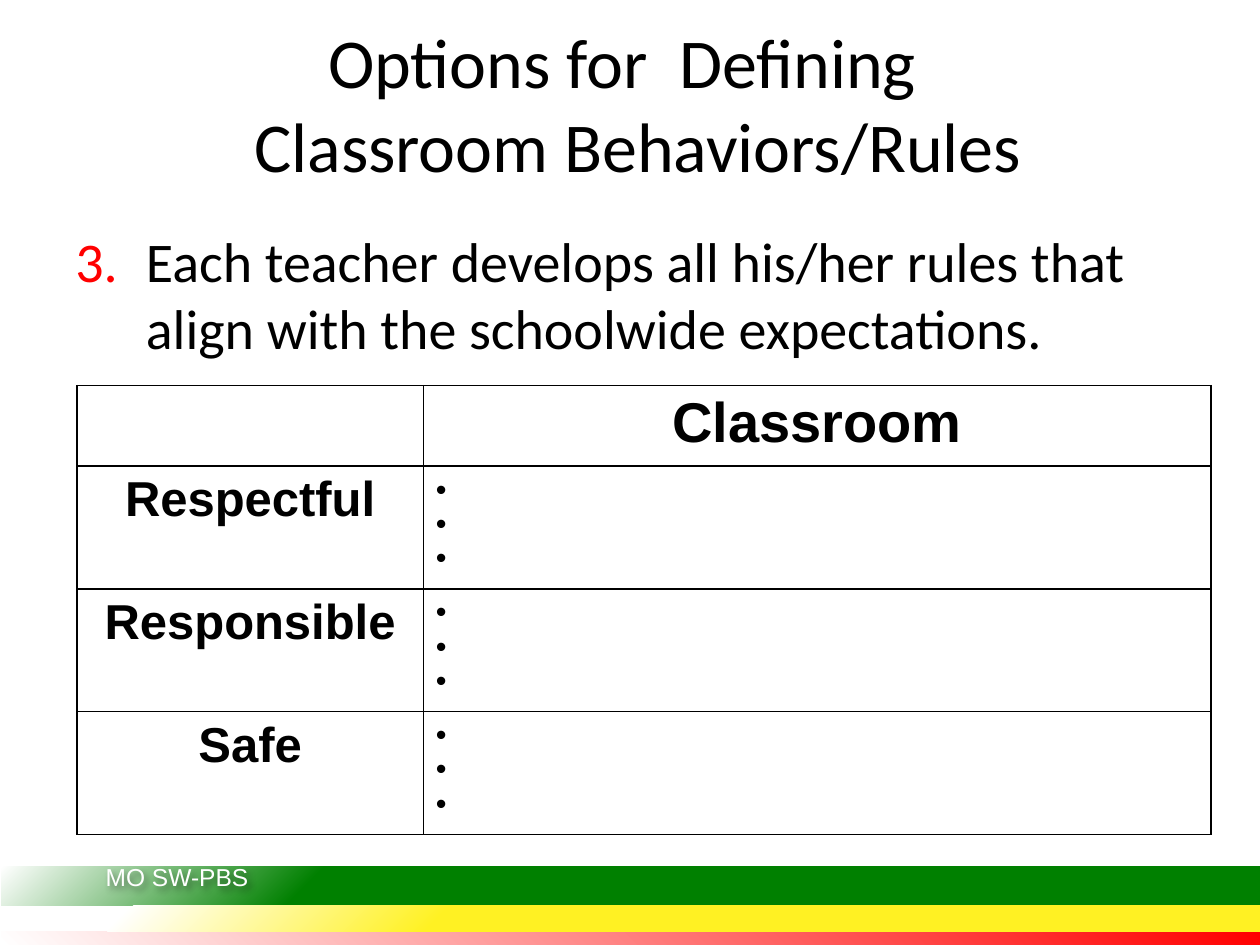
"""Build the classroom rules slide with its table and coloured footer."""
from lxml.etree import SubElement
from pptx import Presentation
from pptx.dml.color import RGBColor
from pptx.enum.shapes import MSO_SHAPE
from pptx.enum.text import MSO_ANCHOR, PP_ALIGN
from pptx.oxml import parse_xml
from pptx.oxml.ns import nsdecls, qn
from pptx.util import Inches, Pt

COLORS = {"black": "000000", "white": "FFFFFF", "red": "FF0000",
          "green": "008000", "yellow": "FFF123"}
EXPECTATIONS = ["Respectful", "Responsible", "Safe"]


def add_xml(parent, tag, **attrs):
    """Append a DrawingML child and return it."""
    return SubElement(parent, qn(f"a:{tag}"), attrs)


def add_run(p, text, size, font, color="black", bold=False):
    """Append one formatted run to a paragraph."""
    r = p.add_run()
    r.text = text
    r.font.size = Pt(size)
    r.font.name = font
    r.font.bold = bold
    r.font.color.rgb = RGBColor.from_string(COLORS[color])


def add_text_box(s, left, top, width, height, anchor=MSO_ANCHOR.TOP):
    """Add a wrapping text box and return it."""
    box = s.shapes.add_textbox(*map(Inches, (left, top, width, height)))
    box.text_frame.word_wrap = True
    box.text_frame.vertical_anchor = anchor
    return box


def add_band(s, top, height, color, stops, bottom):
    """Add a footer band with a radial gradient focused on a right corner."""
    sp = s.shapes.add_shape(MSO_SHAPE.RECTANGLE, Inches(0.01), Inches(top),
                            Inches(10), Inches(height))
    sp.shadow.inherit = False
    sp.line.fill.background()
    sp.fill.background()
    focus = 't="100000"' if bottom else 'b="100000"'
    marks = "".join(
        f'<a:gs pos="{pos * 1000}"><a:srgbClr val="{COLORS[c]}"/></a:gs>'
        for pos, c in zip(stops, (color, "white")))
    grad = parse_xml(
        f'<a:gradFill {nsdecls("a")} rotWithShape="1"><a:gsLst>{marks}</a:gsLst>'
        f'<a:path path="circle"><a:fillToRect l="100000" {focus}/></a:path>'
        '</a:gradFill>')
    spPr = sp._element.spPr
    spPr.replace(spPr.find(qn("a:noFill")), grad)


def add_footer(s):
    """Add the three bands and the shadowed footer label."""
    add_band(s, 7.39, 0.12, "red", (0, 100), False)
    add_band(s, 6.88, 0.31, "green", (75, 100), True)
    add_band(s, 7.19, 0.2, "yellow", (65, 90), True)
    box = add_text_box(s, 0.74, 6.79, 1.92, 0.4)
    add_run(box.text_frame.paragraphs[0], "MO SW-PBS", 14, "Arial", "white")
    effects = add_xml(box._element.spPr, "effectLst")
    shadow = add_xml(effects, "outerShdw", blurRad="50800", dist="38100",
                     dir="2700000", algn="tl", rotWithShape="0")
    color = add_xml(shadow, "srgbClr", val=COLORS["black"])
    add_xml(color, "alpha", val="40000")


def add_title(s):
    """Add the centred two-line title."""
    tf = add_text_box(s, 0.5, 0.3, 9, 1.03, MSO_ANCHOR.MIDDLE).text_frame
    p = tf.paragraphs[0]
    p.alignment = PP_ALIGN.CENTER
    add_run(p, "Options for  Defining ", 40, "Calibri")
    p.add_line_break()
    add_run(p, " Classroom Behaviors/Rules", 40, "Calibri")


def add_option(s):
    """Add the numbered option."""
    p = add_text_box(s, 0.5, 1.75, 9, 1.25).text_frame.paragraphs[0]
    pPr = p._p.get_or_add_pPr()
    pPr.set("marL", str(Inches(0.56)))
    pPr.set("indent", str(Inches(-0.56)))
    add_xml(add_xml(pPr, "buClr"), "srgbClr", val=COLORS["red"])
    add_xml(pPr, "buAutoNum", type="arabicPeriod", startAt="3")
    add_run(p, "Each teacher develops all his/her rules that align with the "
               "schoolwide expectations.", 32, "Calibri")


def style_cell(cell):
    """Clear the fill and draw thin black borders."""
    tcPr = cell._tc.get_or_add_tcPr()
    for side in ("lnL", "lnR", "lnT", "lnB"):
        ln = add_xml(tcPr, side, w=str(Pt(1)))
        add_xml(add_xml(ln, "solidFill"), "srgbClr", val=COLORS["black"])
    cell.fill.background()


def add_heading(cell, text, size):
    """Write a centred bold heading into a cell."""
    p = cell.text_frame.paragraphs[0]
    p.alignment = PP_ALIGN.CENTER
    add_run(p, text, size, "Arial", bold=True)


def add_open_bullets(cell, count=3):
    """Add bullets that wait for the teacher's rules."""
    tf = cell.text_frame
    for i in range(count):
        p = tf.add_paragraph() if i else tf.paragraphs[0]
        pPr = p._p.get_or_add_pPr()
        add_xml(pPr, "buFont", typeface="Arial")
        add_xml(pPr, "buChar", char="•")
        add_run(p, " ", 17.5, "Arial")


def add_rules_table(s):
    """Add the table of expectations and classroom rules."""
    table = s.shapes.add_table(len(EXPECTATIONS) + 1, 2, Inches(0.61),
                               Inches(3.06), Inches(9), Inches(3.46)).table
    table.first_row = table.horz_banding = False
    for col, width in zip(table.columns, (2.75, 6.25)):
        col.width = Inches(width)
    for i, row in enumerate(table.rows):
        row.height = Inches(0.94 if i else 0.64)
    for cell in table.iter_cells():
        style_cell(cell)
    add_heading(table.cell(0, 1), "Classroom", 32)
    for i, name in enumerate(EXPECTATIONS, 1):
        add_heading(table.cell(i, 0), name, 28)
        add_open_bullets(table.cell(i, 1))


def main():
    """Create and save the slide."""
    prs = Presentation()
    prs.slide_width, prs.slide_height = Inches(10), Inches(7.5)
    s = prs.slides.add_slide(prs.slide_layouts[6])
    add_footer(s)
    add_option(s)
    add_rules_table(s)
    add_title(s)
    prs.save("out.pptx")


if __name__ == "__main__":
    main()
